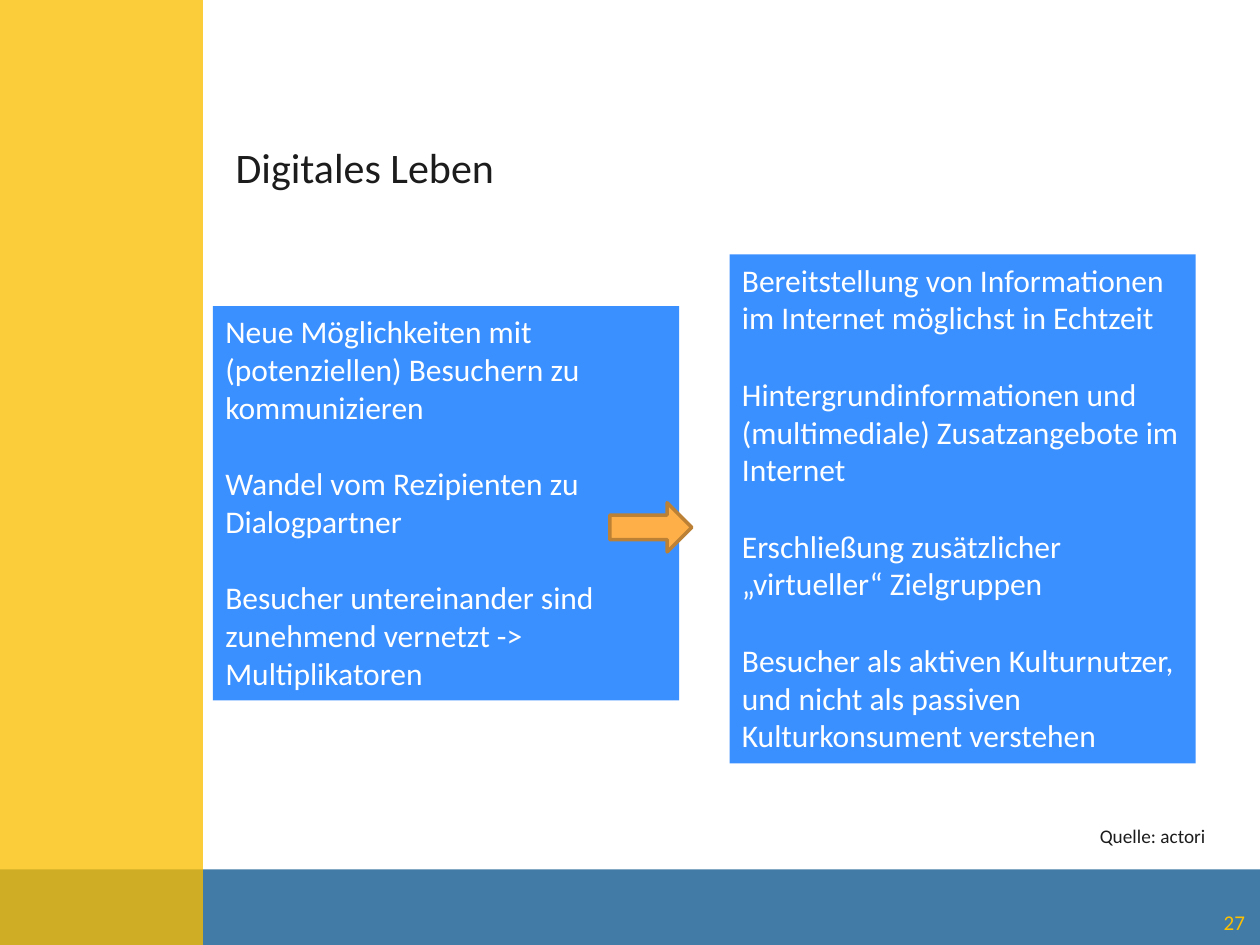
from dataclasses import dataclass

from lxml.etree import SubElement
from pptx import Presentation
from pptx.dml.color import RGBColor
from pptx.enum.shapes import MSO_SHAPE as Preset
from pptx.enum.text import MSO_ANCHOR as Anchor, MSO_AUTO_SIZE as AutoSize, PP_ALIGN as Align
from pptx.oxml.ns import qn
from pptx.util import Inches, Pt

COLORS = {
    "blue": "0A558C",
    "yellow": "FABE00",
    "panel": "3B90FF",
    "arrow": "FFAF47",
    "arrow_edge": "BD8135",
    "ink": "1C1C1C",
    "white": "FFFFFF",
    "number": "FFC000",
}
FONT = "Calibri"
COLUMNS, ROWS = 100, 75
CELL = Inches(0.1)
GROUP_GAP = 22


@dataclass(frozen=True)
class Area:
    column: float
    row: float
    columns: float
    rows: float

    def lengths(self) -> list[int]:
        return [round(value * CELL) for value in (self.column, self.row, self.columns, self.rows)]


@dataclass(frozen=True)
class Band:
    area: Area
    color: str
    opacity: int = 77


@dataclass(frozen=True)
class Panel:
    area: Area
    groups: tuple[tuple[str, ...], ...]


BANDS = (
    Band(Area(0, 69, COLUMNS, 6), "blue"),
    Band(Area(0, 0, 16.1, ROWS), "yellow"),
)
PANELS = (
    Panel(Area(16.9, 24.3, 37, 31.3), (
        ("Neue Möglichkeiten mit", "(potenziellen) Besuchern zu", "kommunizieren"),
        ("Wandel vom Rezipienten zu Dialogpartner",),
        ("Besucher untereinander sind", "zunehmend vernetzt -> Multiplikatoren"),
    )),
    Panel(Area(57.9, 20.2, 37, 40.4), (
        ("Bereitstellung von Informationen", "im Internet möglichst in Echtzeit"),
        ("Hintergrundinformationen und", "(multimediale) Zusatzangebote im Internet"),
        ("Erschließung zusätzlicher „virtueller“ Zielgruppen",),
        ("Besucher als aktiven Kulturnutzer, und nicht als passiven Kulturkonsument verstehen",),
    )),
)


def color(name: str) -> RGBColor:
    return RGBColor.from_string(COLORS[name])


def add_block(page, preset, area: Area, fill: str):
    shape = page.shapes.add_shape(preset, *area.lengths())
    shape.shadow.inherit = False
    shape.fill.solid()
    shape.fill.fore_color.rgb = color(fill)
    shape.line.fill.background()
    return shape


def add_band(page, band: Band) -> None:
    shape = add_block(page, Preset.RECTANGLE, band.area, band.color)
    tint = shape.fill._xPr.find(qn("a:solidFill"))[0]
    SubElement(tint, qn("a:alpha"), val=str(band.opacity * 1000))


def write(box, *groups: tuple[str, ...], size: float, ink: str = "ink",
          align=Align.LEFT, anchor=Anchor.TOP, wrap: bool = False) -> None:
    frame = box.text_frame
    frame.auto_size = AutoSize.NONE
    frame.word_wrap = wrap
    frame.vertical_anchor = anchor
    frame.text = "\n".join(line for group in groups for line in group)
    paragraphs = iter(frame.paragraphs)
    for group_index, group in enumerate(groups):
        for line_index, _ in enumerate(group):
            para = next(paragraphs)
            para.alignment = align
            if group_index and not line_index:
                para.space_before = Pt(GROUP_GAP)
            for span in para.runs:
                span.font.name = FONT
                span.font.size = Pt(size)
                span.font.color.rgb = color(ink)


def add_label(page, area: Area, text: str, **text_format) -> None:
    write(page.shapes.add_textbox(*area.lengths()), (text,), **text_format)


def add_panel(page, panel: Panel) -> None:
    box = add_block(page, Preset.RECTANGLE, panel.area, "panel")
    write(box, *panel.groups, size=18, ink="white", wrap=True)


def add_arrow(page, area: Area) -> None:
    arrow = add_block(page, Preset.RIGHT_ARROW, area, "arrow")
    arrow.line.color.rgb = color("arrow_edge")
    arrow.line.width = Pt(2)


def set_title(page, area: Area, text: str) -> None:
    title = page.shapes.title
    title.left, title.top, title.width, title.height = area.lengths()
    write(title, (text,), size=24)


def main() -> None:
    deck = Presentation()
    deck.slide_width, deck.slide_height = COLUMNS * CELL, ROWS * CELL
    page = deck.slides.add_slide(deck.slide_layouts[5])
    for band in BANDS:
        add_band(page, band)
    set_title(page, Area(17.7, 10.7, 22.8, 5), "Digitales Leben")
    add_label(page, Area(76.5, 71.4, 23.3, 3.6), "27", size=12, ink="number",
              align=Align.RIGHT, anchor=Anchor.MIDDLE, wrap=True)
    add_label(page, Area(86.3, 64.9, 10.5, 2.9), "Quelle: actori", size=11)
    for panel in PANELS:
        add_panel(page, panel)
    add_arrow(page, Area(48.4, 39.9, 6.5, 3.9))
    deck.save("out.pptx")


if __name__ == "__main__":
    main()
